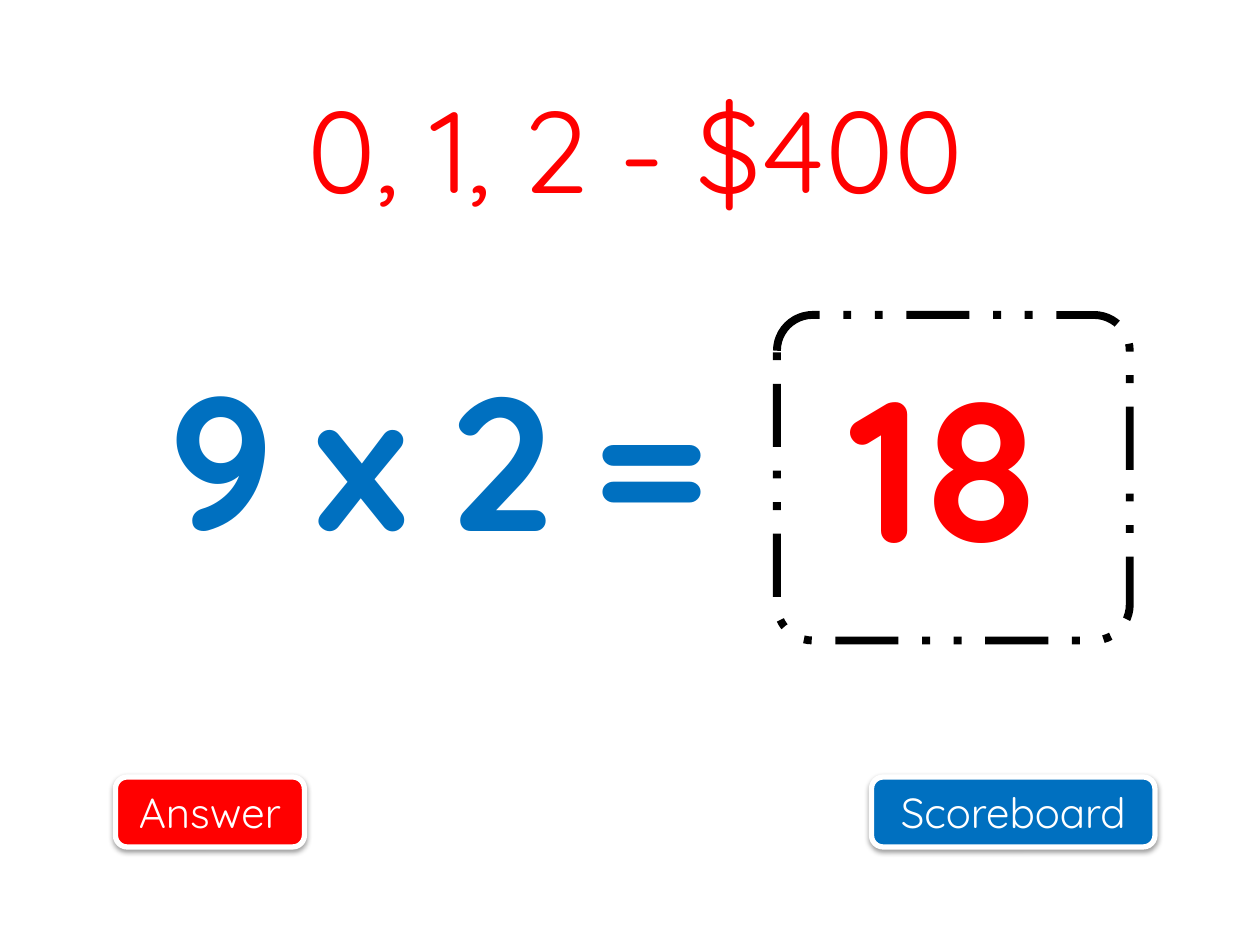
from dataclasses import dataclass

from lxml.etree import SubElement
from pptx import Presentation
from pptx.dml.color import RGBColor
from pptx.enum.dml import MSO_LINE
from pptx.enum.shapes import MSO_SHAPE
from pptx.enum.text import MSO_ANCHOR, PP_ALIGN
from pptx.oxml.ns import qn
from pptx.util import Pt


@dataclass(frozen=True)
class Theme:
    """Colours, font and type sizes of the quiz slide."""
    red: RGBColor = RGBColor(0xFF, 0x00, 0x00)
    blue: RGBColor = RGBColor(0x00, 0x70, 0xC0)
    white: RGBColor = RGBColor(0xFF, 0xFF, 0xFF)
    black: RGBColor = RGBColor(0x00, 0x00, 0x00)
    font: str = "Quicksand"
    button_size: int = 24
    title_size: int = 66
    question_size: int = 108
    answer_size: int = 115


THEME = Theme()


def set_attributes(target, values):
    """Set each named attribute of the target."""
    for name, value in values.items():
        setattr(target, name, value)


def write_text(shape, text, size, color, bold=False, align=PP_ALIGN.CENTER,
               anchor=MSO_ANCHOR.MIDDLE, hanging=0, spacing=0):
    """Write one formatted paragraph into the shape."""
    frame = shape.text_frame
    set_attributes(frame, {"word_wrap": True, "vertical_anchor": anchor})
    para = frame.paragraphs[0]
    para.alignment = align
    if hanging:
        properties = para._p.get_or_add_pPr()
        properties.set("marL", str(Pt(hanging)))
        properties.set("indent", str(-Pt(hanging)))
    span = para.add_run()
    span.text = text
    set_attributes(span.font, {"name": THEME.font, "size": Pt(size), "bold": bold})
    span.font.color.rgb = color
    if spacing:
        span.font._element.set("spc", str(spacing * 100))


def add_text(page, bounds, text, size, color, **formats):
    """Add a text box holding one paragraph."""
    box = page.shapes.add_textbox(*map(Pt, bounds))
    write_text(box, text, size, color, **formats)


def add_rounded_box(page, bounds, fill, line, width):
    """Add a filled and outlined rounded rectangle."""
    box = page.shapes.add_shape(MSO_SHAPE.ROUNDED_RECTANGLE, *map(Pt, bounds))
    box.shadow.inherit = False
    box.fill.solid()
    box.fill.fore_color.rgb = fill
    box.line.color.rgb = line
    box.line.width = Pt(width)
    return box


def add_shadow(shape, blur, distance, opacity):
    """Cast a soft black shadow straight down."""
    effects = shape._element.spPr.find(qn("a:effectLst"))
    shadow = SubElement(effects, qn("a:outerShdw"), blurRad=str(Pt(blur)),
                        dist=str(Pt(distance)), dir="5400000", rotWithShape="0")
    color = SubElement(shadow, qn("a:srgbClr"), val=str(THEME.black))
    SubElement(color, qn("a:alpha"), val=str(opacity * 1000))


def add_button(page, left, width, text, fill):
    """Add a shadowed button on the bottom row."""
    button = add_rounded_box(page, (left, 444, width, 40), fill, THEME.white, 3)
    add_shadow(button, 3.1, 1.6, 38)
    write_text(button, text, THEME.button_size, THEME.white)


def add_answer_frame(page):
    """Add the dashed frame around the answer."""
    frame = add_rounded_box(page, (444, 180, 201.6, 186), THEME.white, THEME.black, 4.5)
    frame.adjustments[0] = 0.11
    frame.line.dash_style = MSO_LINE.DASH_DOT_DOT


def main():
    """Build the quiz slide and save it."""
    deck = Presentation()
    set_attributes(deck, {"slide_width": Pt(720), "slide_height": Pt(540)})
    page = deck.slides.add_slide(deck.slide_layouts[6])
    add_button(page, 66, 108, "Answer", THEME.red)
    add_button(page, 498, 162, "Scoreboard", THEME.blue)
    add_text(page, (66, 48, 594, 72), "0, 1, 2 - $400", THEME.title_size, THEME.red)
    equation = {"bold": True, "anchor": MSO_ANCHOR.TOP, "hanging": 27}
    add_text(page, (90, 192, 570, 168), "9 x 2 =", THEME.question_size, THEME.blue,
             align=PP_ALIGN.LEFT, spacing=-3, **equation)
    add_answer_frame(page)
    add_text(page, (426, 192, 228, 168), "18", THEME.answer_size, THEME.red, **equation)
    deck.save("out.pptx")


if __name__ == "__main__":
    main()
